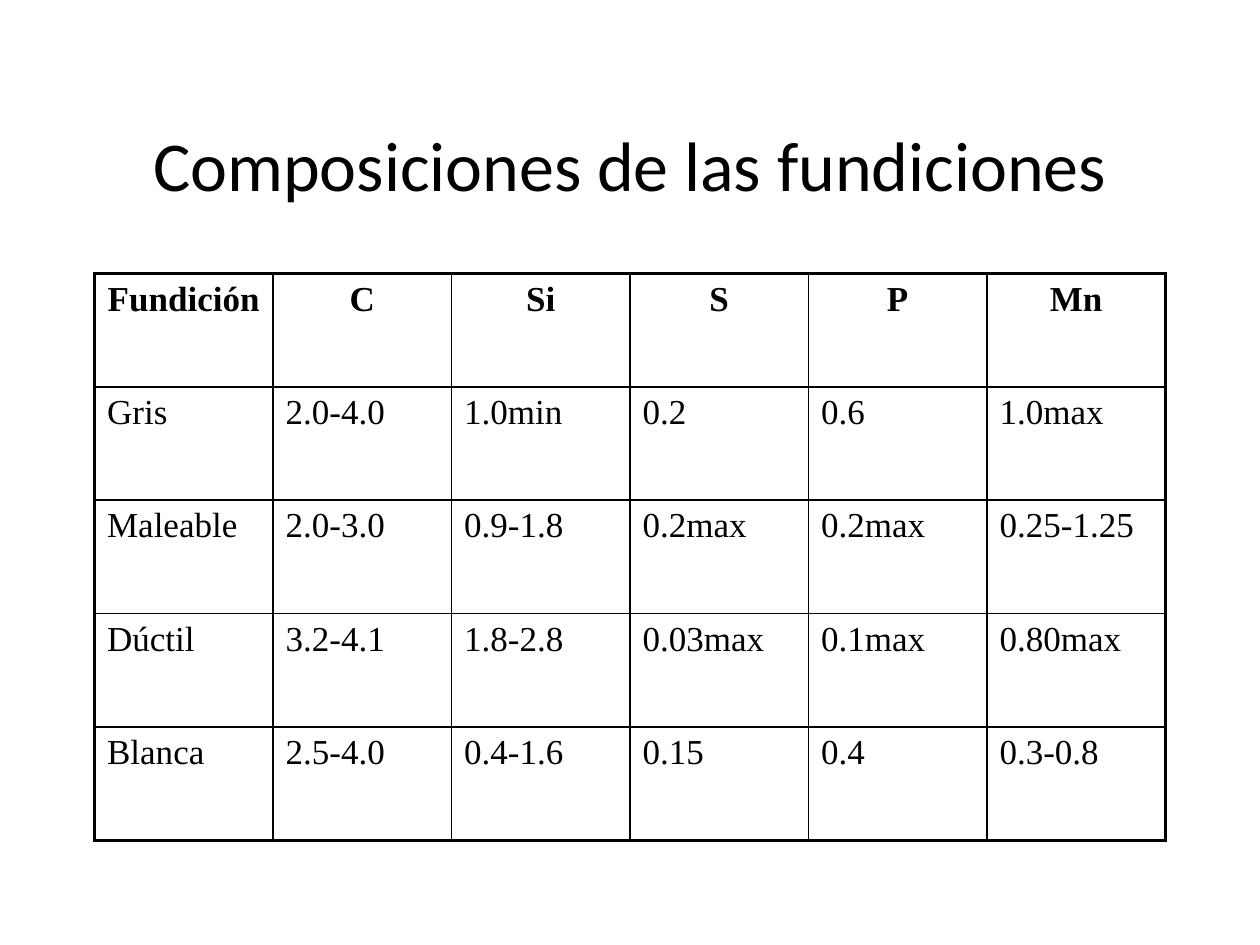
from lxml import etree
from pptx import Presentation, util as u
from pptx.dml.color import RGBColor
from pptx.enum import text
from pptx.oxml import ns

BLACK = RGBColor(0x00, 0x00, 0x00)
WIDTH, HEIGHT = u.Inches(10), u.Inches(7.5)
LEFT, CONTENT_WIDTH = u.Inches(0.75), u.Inches(8.5)
TITLE_ONLY = 5
OUTER, INNER = u.Pt(2.25), u.Pt(1)
COMPOSITIONS = [
    ["Fundición", "C", "Si", "S", "P", "Mn"],
    ["Gris", "2.0-4.0", "1.0min", "0.2", "0.6", "1.0max"],
    ["Maleable", "2.0-3.0", "0.9-1.8", "0.2max", "0.2max", "0.25-1.25"],
    ["Dúctil", "3.2-4.1", "1.8-2.8", "0.03max", "0.1max", "0.80max"],
    ["Blanca", "2.5-4.0", "0.4-1.6", "0.15", "0.4", "0.3-0.8"],
]


def format_paragraph(para, font_name, size, bold=False, centred=False):
    """Set the font and alignment of a paragraph."""
    font = para.font
    font.name, font.size, font.bold = font_name, u.Pt(size), bold
    font.color.rgb = BLACK
    para.alignment = text.PP_ALIGN.CENTER if centred else text.PP_ALIGN.LEFT


def add_title(page, words):
    """Place and format the title placeholder."""
    title = page.shapes.title
    title.left, title.top = LEFT, u.Inches(0.67)
    title.width, title.height = CONTENT_WIDTH, u.Inches(1.25)
    frame = title.text_frame
    frame.text = words
    frame.vertical_anchor = text.MSO_ANCHOR.MIDDLE
    format_paragraph(frame.paragraphs[0], "Calibri", 40, centred=True)


def set_border(cell, side, width):
    """Draw a solid black line on one side of a cell."""
    properties = cell._tc.get_or_add_tcPr()
    line = etree.SubElement(properties, ns.qn(f"a:ln{side}"), w=str(width))
    fill = etree.SubElement(line, ns.qn("a:solidFill"))
    etree.SubElement(fill, ns.qn("a:srgbClr"), val=str(BLACK))


def fill_cell(cell, words, header, outer_sides):
    """Write a cell's text and draw its borders."""
    cell.text = words
    format_paragraph(cell.text_frame.paragraphs[0], "Times New Roman", 20,
                     bold=header, centred=header)
    for side in "LRTB":
        set_border(cell, side, OUTER if side in outer_sides else INNER)
    cell.fill.background()


def add_composition_table(page, rows):
    """Add an even grid with a heavy outer frame."""
    last_row, last_column = len(rows) - 1, len(rows[0]) - 1
    table = page.shapes.add_table(len(rows), len(rows[0]), LEFT, u.Inches(2.17),
                                  CONTENT_WIDTH, u.Inches(4.5)).table
    table.horz_banding = False
    for r, row in enumerate(rows):
        for c, words in enumerate(row):
            edges = {"L": c == 0, "R": c == last_column,
                     "T": r == 0, "B": r == last_row}
            outer_sides = [side for side, outer in edges.items() if outer]
            fill_cell(table.cell(r, c), words, r == 0, outer_sides)


def main():
    """Build the slide of cast iron compositions."""
    deck = Presentation()
    deck.slide_width, deck.slide_height = WIDTH, HEIGHT
    page = deck.slides.add_slide(deck.slide_layouts[TITLE_ONLY])
    add_title(page, "Composiciones de las fundiciones")
    add_composition_table(page, COMPOSITIONS)
    deck.save("out.pptx")


if __name__ == "__main__":
    main()
